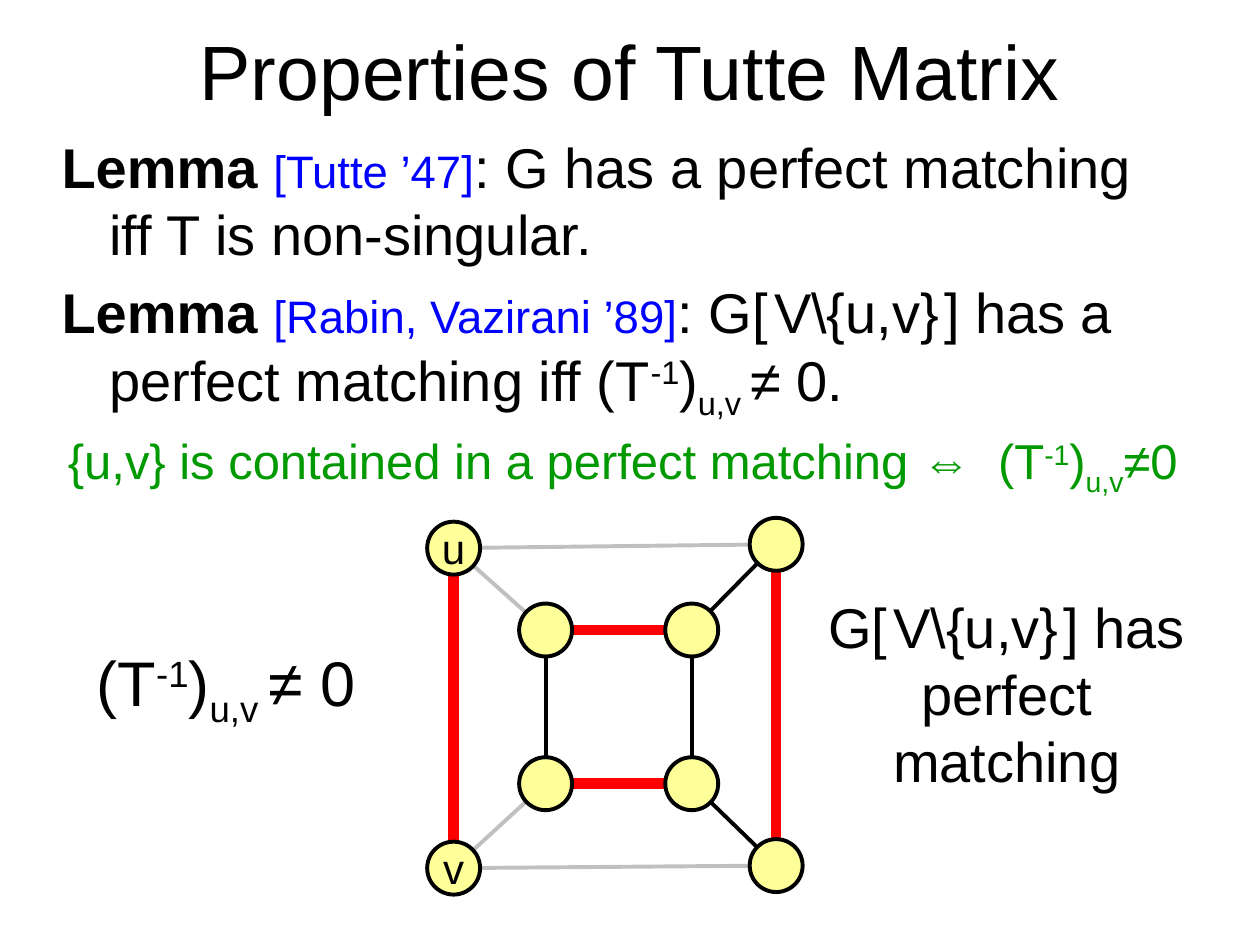
from math import hypot

from lxml import etree
from pptx import Presentation
from pptx import util as u
from pptx.dml.color import RGBColor
from pptx.enum import shapes, text
from pptx.oxml.ns import qn

COLORS = {"ink": "000000", "cite": "0000FF", "claim": "009900",
          "node": "FFFF99", "match": "FF0000", "faded": "C0C0C0"}
COL, ROW = u.Inches(10) // 100, u.Inches(7.5) // 75
RADIUS = 2.1
CENTER = text.PP_ALIGN.CENTER
MIDDLE = text.MSO_ANCHOR.MIDDLE
GROW = text.MSO_AUTO_SIZE.SHAPE_TO_FIT_TEXT
HANGING = {"marL": u.Inches(0.38), "indent": u.Inches(-0.38)}

SUP, SUB = {"baseline": 30}, {"baseline": -25}
BOLD = {"bold": True}
CITE = {"size": 26, "color": "cite"}
ENTRY = [("-1", SUP), (")", {}), ("u,v", SUB)]
REDUCED = [("G[", {}), (" ", {"size": 12}), ("V\\{u,v}", {}), (" ", {"size": 10})]

NODES = {"u": (36, 43.5), "v": (36, 68.9),
         "top right": (61.6, 43.2), "bottom right": (61.6, 68.7),
         "inner top left": (43.3, 50), "inner top right": (54.9, 50),
         "inner bottom left": (43.3, 62.2), "inner bottom right": (54.9, 62.2)}
EDGES = {
    ("faded", 2.25): [("top right", "u"), ("bottom right", "v"),
                      ("u", "inner top left"), ("v", "inner bottom left")],
    ("ink", 2.25): [("inner top left", "inner bottom left"),
                    ("inner top right", "inner bottom right"),
                    ("inner bottom right", "bottom right"),
                    ("inner top right", "top right")],
    ("match", 6): [("v", "u"), ("bottom right", "top right"),
                   ("inner top left", "inner top right"),
                   ("inner bottom left", "inner bottom right")],
}


def rgb(name):
    return RGBColor.from_string(COLORS[name])


def box(left, top, width, height):
    return left * COL, top * ROW, width * COL, height * ROW


def set_all(target, values):
    for name, value in values.items():
        setattr(target, name, value)


def add_run(p, words, size, color="ink", bold=False, baseline=0):
    for i, line in enumerate(words.split("\n")):
        if i:
            p.add_line_break()
        r = p.add_run()
        r.text = line
        set_all(r.font, {"name": "Arial", "size": u.Pt(size), "bold": bold})
        r.font.color.rgb = rgb(color)
        if baseline:
            r.font._element.set("baseline", str(baseline * 1000))


def fill_text(tf, paragraphs, base, para=None, indent=None, **frame):
    set_all(tf, {"word_wrap": True, "auto_size": text.MSO_AUTO_SIZE.NONE, **frame})
    for i, runs in enumerate(paragraphs):
        p = tf.add_paragraph() if i else tf.paragraphs[0]
        set_all(p, para or {})
        for name, value in (indent or {}).items():
            p._p.get_or_add_pPr().set(name, str(value))
        for words, style in runs:
            add_run(p, words, **{**base, **style})


def add_text(s, place, paragraphs, base, **options):
    sp = s.shapes.add_textbox(*(int(v) for v in box(*place)))
    fill_text(sp.text_frame, paragraphs, base, **options)


def add_edge(s, start, end, color, width):
    (x1, y1), (x2, y2) = NODES[start], NODES[end]
    length = hypot(x2 - x1, y2 - y1)
    dx, dy = (x2 - x1) / length * RADIUS, (y2 - y1) / length * RADIUS
    ln = s.shapes.add_connector(
        shapes.MSO_CONNECTOR.STRAIGHT, int((x1 + dx) * COL), int((y1 + dy) * ROW),
        int((x2 - dx) * COL), int((y2 - dy) * ROW))
    ln.line.color.rgb = rgb(color)
    ln.line.width = u.Pt(width)
    etree.SubElement(ln._element.spPr, qn("a:effectLst"))


def add_node(s, name, x, y):
    place = box(x - RADIUS, y - RADIUS, 2 * RADIUS, 2 * RADIUS)
    sp = s.shapes.add_shape(shapes.MSO_SHAPE.OVAL, *(int(v) for v in place))
    sp.shadow.inherit = False
    sp.fill.solid()
    sp.fill.fore_color.rgb = rgb("node")
    sp.line.color.rgb = rgb("ink")
    sp.line.width = u.Pt(2.25)
    if len(name) == 1:
        fill_text(sp.text_frame, [[(name, {})]], {"size": 24},
                  para={"alignment": CENTER}, word_wrap=False, vertical_anchor=MIDDLE)


def add_title(s, words):
    sp = s.shapes.title
    left, top, width, height = (int(v) for v in box(5, 0.6, 90, 9.9))
    set_all(sp, {"left": left, "top": top, "width": width, "height": height})
    fill_text(sp.text_frame, [[(words, {})]], {"size": 44},
              para={"alignment": CENTER}, vertical_anchor=MIDDLE)


def add_graph(s):
    for (color, width), pairs in EDGES.items():
        for start, end in pairs:
            add_edge(s, start, end, color, width)
    for name, (x, y) in NODES.items():
        add_node(s, name, x, y)


def main():
    prs = Presentation()
    prs.slide_width, prs.slide_height = 100 * COL, 75 * ROW
    s = prs.slides.add_slide(prs.slide_layouts[5])
    add_title(s, "Properties of Tutte Matrix")
    add_text(s, (3.9, 10, 94.3, 57.8), [
        [("Lemma ", BOLD), ("[Tutte ’47]", CITE),
         (": G has a perfect matching\niff T is non-singular.", {})],
        [("Lemma ", BOLD), ("[Rabin, Vazirani ’89]", CITE), (": ", {}), *REDUCED,
         ("] has a perfect matching iff (T", {}), *ENTRY, (" ", SUB), ("≠ 0.", {})],
    ], {"size": 32}, para={"space_before": u.Pt(6.4)}, indent=HANGING)
    add_text(s, (4.4, 33.7, 95.2, 5.7), [
        [("{u,v} is contained in a perfect matching ⇔  (T", {}), *ENTRY, ("≠0", {})],
    ], {"size": 28, "color": "claim"}, word_wrap=False, auto_size=GROW)
    add_text(s, (5.9, 50.6, 24.1, 7), [[("(T", {}), *ENTRY, (" ", SUB), ("≠ 0", {})]],
             {"size": 36}, para={"alignment": CENTER}, word_wrap=False, auto_size=GROW)
    add_text(s, (64.5, 46.5, 30.8, 17),
             [[*REDUCED, ("] has", {})], [("perfect\nmatching", {})]],
             {"size": 32}, para={"alignment": CENTER}, auto_size=GROW)
    add_graph(s)
    prs.save("out.pptx")


if __name__ == "__main__":
    main()
